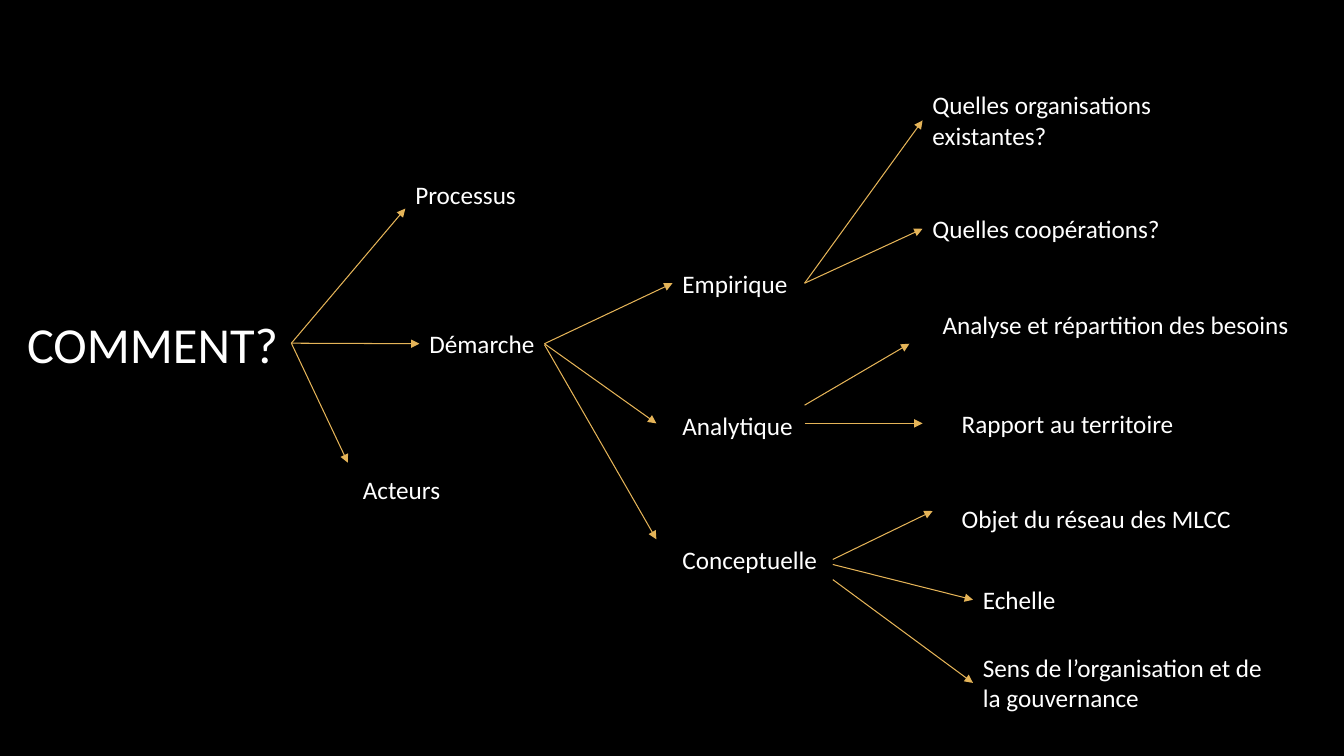
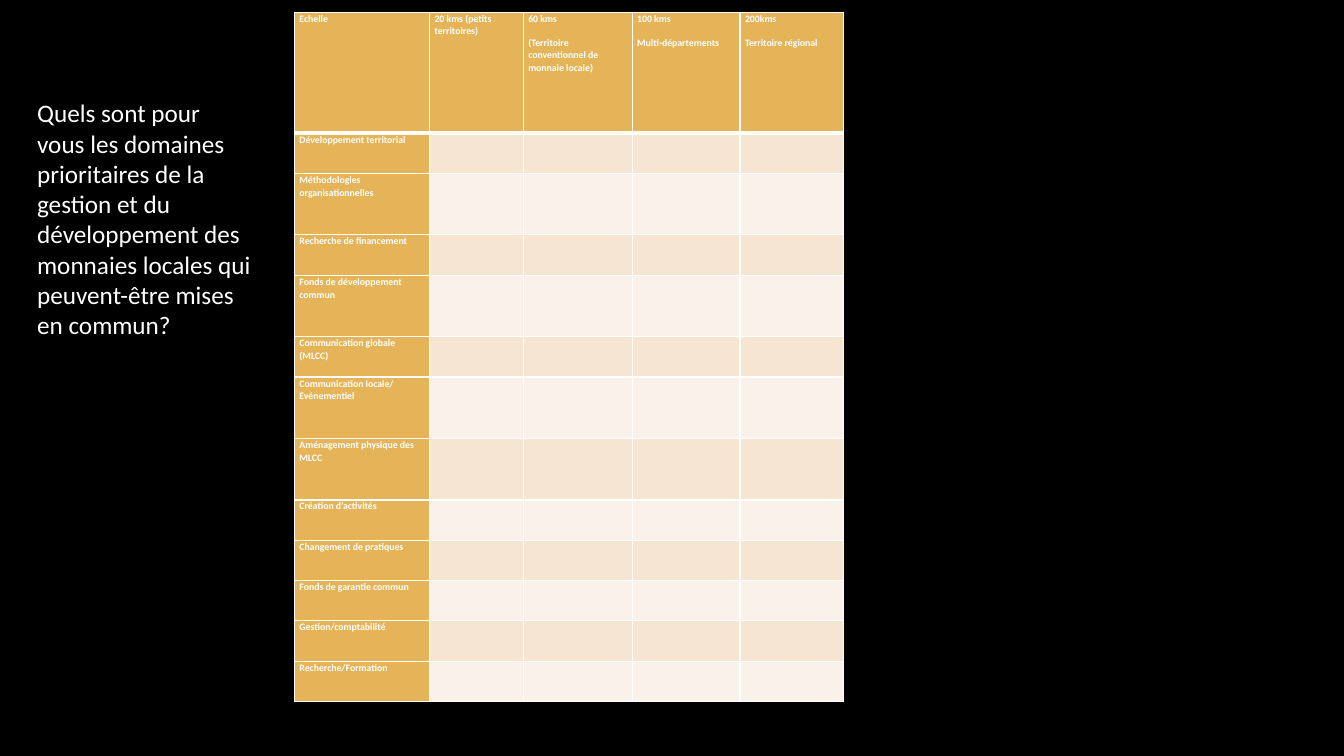
import pptx
import pptx.util
import pptx.dml.color
import pptx.enum.shapes
import pptx.enum.text
import pptx.oxml.ns
from lxml import etree

Inches, Pt = pptx.util.Inches, pptx.util.Pt
qn = pptx.oxml.ns.qn
BLACK, WHITE, GOLD = "000000", "FFFFFF", "E5B458"
BANDS = ["F5E5D1", "FAF2EA"]
FONT = "Calibri"


def color(hex_value):
    return pptx.dml.color.RGBColor.from_string(hex_value)


def add_text(s, text, x, y, w, h, size=18):
    """Add a wrapped white text box."""
    sp = s.shapes.add_textbox(Inches(x), Inches(y), Inches(w), Inches(h))
    tf = sp.text_frame
    tf.word_wrap = True
    tf.vertical_anchor = pptx.enum.text.MSO_ANCHOR.MIDDLE if size > 18 else pptx.enum.text.MSO_ANCHOR.TOP
    r = tf.paragraphs[0].add_run()
    r.text = text
    for name, value in {"size": Pt(size), "name": FONT}.items():
        setattr(r.font, name, value)
    r.font.color.rgb = color(WHITE)
    return sp


prs = pptx.Presentation()
prs.slide_width, prs.slide_height = Inches(13.33), Inches(7.5)
slides = []
for _ in range(2):
    s = prs.slides.add_slide(prs.slide_layouts[6])
    s.background.fill.solid()
    s.background.fill.fore_color.rgb = color(BLACK)
    slides.append(s)

# Slide 1: tree of questions
s = slides[0]
title = add_text(s, "COMMENT?", 0.17, 2.61, 2.72, 1.59, size=36)
nodes = {"COMMENT?": title}
for text, x, y, w, h in [
    ("Processus", 4.02, 1.73, 2.02, 0.4),
    ("Démarche", 4.16, 3.21, 2.02, 0.4),
    ("Acteurs", 3.5, 4.66, 2.02, 0.4),
    ("Empirique", 6.67, 2.61, 2.02, 0.4),
    ("Analytique", 6.67, 4.02, 1.66, 0.4),
    ("Conceptuelle", 6.67, 5.35, 1.74, 0.4),
    ("Quelles organisations existantes?", 9.15, 0.84, 2.55, 0.71),
    ("Quelles coopérations?", 9.15, 2.07, 2.76, 0.4),
    ("Analyse et répartition des besoins", 9.25, 3.02, 3.75, 0.4),
    ("Rapport au territoire", 9.44, 4, 2.47, 0.4),
    ("Objet du réseau des MLCC", 9.44, 4.94, 3.04, 0.4),
    ("Echelle", 9.65, 5.75, 2.05, 0.4),
    ("Sens de l’organisation et de la gouvernance", 9.65, 6.42, 3.04, 0.71),
]:
    nodes[text] = add_text(s, text, x, y, w, h)

# Arrows: start point, end point, node joined at the start, node joined at the end
for x1, y1, x2, y2, source, target in [
    (2.89, 3.41, 4.02, 2.07, "COMMENT?", None),
    (2.89, 3.41, 4.16, 3.41, "COMMENT?", "Démarche"),
    (2.89, 3.41, 3.45, 4.59, "COMMENT?", None),
    (5.4, 3.41, 6.67, 2.81, None, "Empirique"),
    (5.4, 3.41, 6.51, 4.2, None, None),
    (5.4, 3.42, 6.51, 5.35, None, None),
    (7.98, 2.81, 9.15, 1.19, None, "Quelles organisations existantes?"),
    (7.98, 2.81, 9.15, 2.27, None, "Quelles coopérations?"),
    (7.98, 4.02, 9.02, 3.41, None, None),
    (7.98, 4.2, 9.15, 4.2, None, None),
    (8.26, 5.55, 9.25, 5.07, None, None),
    (8.26, 5.6, 9.65, 5.95, None, "Echelle"),
    (8.26, 5.75, 9.65, 6.77, None, "Sens de l’organisation et de la gouvernance"),
]:
    arrow = s.shapes.add_connector(
        pptx.enum.shapes.MSO_CONNECTOR.STRAIGHT, Inches(x1), Inches(y1), Inches(x2), Inches(y2))
    if source:
        arrow.begin_connect(nodes[source], 3)
    if target:
        arrow.end_connect(nodes[target], 1)
    arrow.line.color.rgb = color(GOLD)
    arrow.line.width = Pt(0.75)
    etree.SubElement(arrow.line._get_or_add_ln(), qn("a:tailEnd"), type="triangle")
    etree.SubElement(arrow._element.spPr, qn("a:effectLst"))

# Slide 2: question and table of domains by scale
s = slides[1]
add_text(s, "Quels sont pour vous les domaines prioritaires de la gestion et du développement "
            "des monnaies locales qui peuvent-être mises en commun?", 0.27, 0.92, 2.34, 2.52)

header = [
    ["Echelle"],
    ["20 kms (petits territoires)"],
    ["60 kms", "(Territoire conventionnel de monnaie locale)"],
    ["100 kms", "Multi-départements"],
    ["200kms", "Territoire régional"],
]
LOW, HIGH = 0.4, 0.61
domains = [
    ("Développement territorial", LOW),
    ("Méthodologies organisationnelles", HIGH),
    ("Recherche de financement", LOW),
    ("Fonds de développement commun", HIGH),
    ("Communication globale (MLCC)", LOW),
    ("Communication locale/ Evénementiel", HIGH),
    ("Aménagement physique des MLCC", HIGH),
    ("Création d’activités", LOW),
    ("Changement de pratiques", LOW),
    ("Fonds de garantie commun", LOW),
    ("Gestion/comptabilité", LOW),
    ("Recherche/Formation", LOW),
]
widths = [1.34, 0.93, 1.08, 1.07, 1.03]
heights = [1.2] + [h for _, h in domains]
rows = [header] + [[[text]] + [[]] * (len(widths) - 1) for text, _ in domains]

table = s.shapes.add_table(len(rows), len(widths), Inches(2.92), Inches(0.12),
                           Inches(sum(widths)), Inches(sum(heights))).table
for column, w in zip(table.columns, widths):
    column.width = Inches(w)
for row, h in zip(table.rows, heights):
    row.height = Inches(h)

cell_margins = {"margin_left": Inches(0.05), "margin_right": Inches(0.05),
                "margin_top": 0, "margin_bottom": 0}
paragraph_format = {"line_spacing": 1.07, "space_after": Pt(8)}
cell_font = {"size": Pt(7), "name": FONT, "bold": True}
for i, row in enumerate(rows):
    for j, lines in enumerate(row):
        cell = table.cell(i, j)
        for name, value in cell_margins.items():
            setattr(cell, name, value)

        # White borders, thicker under the header
        tcPr = cell._tc.get_or_add_tcPr()
        for side in "LRTB":
            thick = (i, side) in [(0, "B"), (1, "T")]
            ln = etree.SubElement(tcPr, qn("a:ln" + side), w=str(Pt(3 if thick else 1)))
            fill = etree.SubElement(ln, qn("a:solidFill"))
            etree.SubElement(fill, qn("a:srgbClr"), val=WHITE)
        cell.fill.solid()
        cell.fill.fore_color.rgb = color(GOLD if i == 0 or j == 0 else BANDS[(i - 1) % 2])

        # Labels
        tf = cell.text_frame
        for k, line in enumerate(lines):
            p = tf.add_paragraph() if k else tf.paragraphs[0]
            for name, value in paragraph_format.items():
                setattr(p, name, value)
            r = p.add_run()
            r.text = line
            for name, value in cell_font.items():
                setattr(r.font, name, value)
            r.font.color.rgb = color(WHITE)

prs.save("out.pptx")
